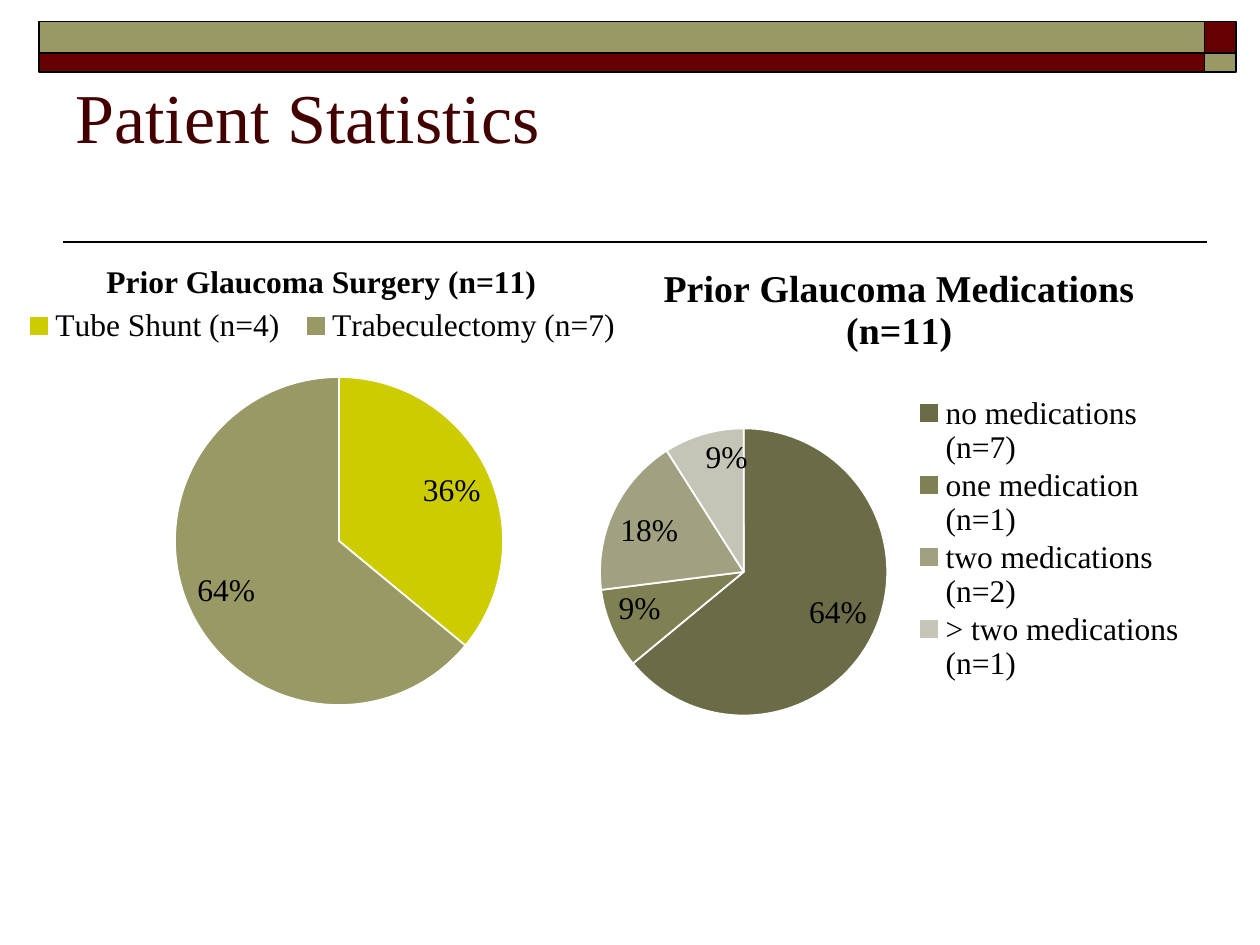
from dataclasses import dataclass

from lxml.etree import SubElement
from pptx import Presentation
from pptx.chart.data import CategoryChartData
from pptx.dml.color import RGBColor
from pptx.enum.chart import XL_CHART_TYPE, XL_LABEL_POSITION, XL_LEGEND_POSITION
from pptx.enum.shapes import MSO_CONNECTOR, MSO_SHAPE
from pptx.enum.text import MSO_ANCHOR, PP_ALIGN
from pptx.oxml import parse_xml
from pptx.oxml.ns import nsdecls, qn
from pptx.util import Inches, Pt


@dataclass(frozen=True)
class Theme:
    font: str = "Times New Roman"
    black: str = "000000"
    white: str = "FFFFFF"
    maroon: str = "660000"
    olive: str = "999966"
    title: str = "420000"
    surgery: tuple = ("CCCC00", "999966")
    medications: tuple = ("6B6B47", "808055", "A1A182", "C5C5B7")
    title_size: float = 40
    chart_size: float = 18
    large_chart_title_size: float = 21.6


THEME = Theme()


def color(value):
    return RGBColor.from_string(value)


def style_font(font, size, value, bold=False):
    font.name = THEME.font
    font.size = Pt(size)
    font.bold = bold
    font.color.rgb = color(value)


def add_band(slide, left, top, width, height, fill):
    shape = slide.shapes.add_shape(
        MSO_SHAPE.RECTANGLE, Inches(left), Inches(top), Inches(width), Inches(height))
    shape.shadow.inherit = False
    shape.fill.solid()
    shape.fill.fore_color.rgb = color(fill)
    shape.line.color.rgb = color(THEME.black)
    shape.line.width = Pt(1)


def add_header(slide):
    columns = ((0.31, 9.25), (9.56, 0.25))
    rows = ((0.17, 0.25), (0.42, 0.15))
    fills = (THEME.olive, THEME.maroon)
    for row, (top, height) in enumerate(rows):
        for column, (left, width) in enumerate(columns):
            add_band(slide, left, top, width, height, fills[(row + column) % 2])


def add_rule(slide):
    connector = slide.shapes.add_connector(
        MSO_CONNECTOR.STRAIGHT, Inches(9.58), Inches(1.92), Inches(0.5), Inches(1.92))
    connector.line.color.rgb = color(THEME.black)
    connector.line.width = Pt(1)
    SubElement(connector.element.spPr, qn("a:effectLst"))


def set_title(slide, text):
    title = slide.shapes.title
    title.left, title.top = Inches(0.5), Inches(0.58)
    title.width, title.height = Inches(9), Inches(1.25)
    text_frame = title.text_frame
    text_frame.text = text
    text_frame.vertical_anchor = MSO_ANCHOR.TOP
    text_frame.margin_top = 0
    paragraph = text_frame.paragraphs[0]
    paragraph.alignment = PP_ALIGN.LEFT
    style_font(paragraph.runs[0].font, THEME.title_size, THEME.title)


def place(element, index, inner=False, **fractions):
    for layout in element.findall(qn("c:layout")):
        element.remove(layout)
    layout = parse_xml(f"<c:layout {nsdecls('c')}><c:manualLayout/></c:layout>")
    settings = {"layoutTarget": "inner"} if inner else {}
    settings.update(xMode="edge", yMode="edge", **fractions)
    for name, value in settings.items():
        SubElement(layout[0], qn(f"c:{name}")).set("val", str(value))
    element.insert(index, layout)


def add_pie(slide, box, title, title_size, title_place, categories, values, fills,
            legend_position, legend_place, plot_place):
    data = CategoryChartData()
    data.categories = categories
    data.add_series(title.replace("\n", " "), values)
    chart = slide.shapes.add_chart(
        XL_CHART_TYPE.PIE, *[Inches(length) for length in box], data).chart
    style_font(chart.font, THEME.chart_size, THEME.black)

    chart.has_title = True
    text_frame = chart.chart_title.text_frame
    text_frame.text = title
    for paragraph in text_frame.paragraphs:
        style_font(paragraph.runs[0].font, title_size, THEME.black, bold=True)
    place(chart.chart_title._element, 1, **title_place)

    chart.has_legend = True
    chart.legend.position = legend_position
    chart.legend.include_in_layout = False
    style_font(chart.legend.font, THEME.chart_size, THEME.black)
    place(chart.legend._element, 1, **legend_place)

    plot = chart.plots[0]
    plot.vary_by_categories = True
    plot.has_data_labels = True
    labels = plot.data_labels
    labels.show_percentage = True
    labels.show_value = False
    labels.number_format = "0%"
    labels.number_format_is_linked = False
    labels.position = XL_LABEL_POSITION.INSIDE_END
    style_font(labels.font, THEME.chart_size, THEME.black)
    for index, fill in enumerate(fills):
        point_format = plot.series[0].points[index].format
        point_format.fill.solid()
        point_format.fill.fore_color.rgb = color(fill)
        point_format.line.color.rgb = color(THEME.white)
        point_format.line.width = Pt(1)
    place(chart._chartSpace.chart.plotArea, 0, inner=True, **plot_place)


def main():
    presentation = Presentation()
    presentation.slide_width, presentation.slide_height = Inches(10), Inches(7.5)
    slide = presentation.slides.add_slide(presentation.slide_layouts[5])
    add_rule(slide)
    add_header(slide)
    set_title(slide, "Patient Statistics")
    add_pie(
        slide, (0, 1.92, 5.33, 3.83),
        "Prior Glaucoma Surgery (n=11)", THEME.chart_size, dict(x=0.15, y=0.03),
        ("Tube Shunt (n=4)", "Trabeculectomy (n=7)"), (36, 64), THEME.surgery,
        XL_LEGEND_POSITION.TOP, dict(x=0.02, y=0.13, w=0.92, h=0.09),
        dict(x=0.26, y=0.28, w=0.49, h=0.68))
    add_pie(
        slide, (4.17, 1.92, 5.33, 4),
        "Prior Glaucoma Medications\n(n=11)", THEME.large_chart_title_size,
        dict(x=0.2, y=0.04),
        ("no medications (n=7)", "one medication (n=1)",
         "two medications (n=2)", "> two medications (n=1)"),
        (64, 9, 18, 9), THEME.medications,
        XL_LEGEND_POSITION.RIGHT, dict(x=0.58, y=0.3, w=0.4, h=0.58),
        dict(x=0.11, y=0.37, w=0.43, h=0.57))
    presentation.save("out.pptx")


if __name__ == "__main__":
    main()
